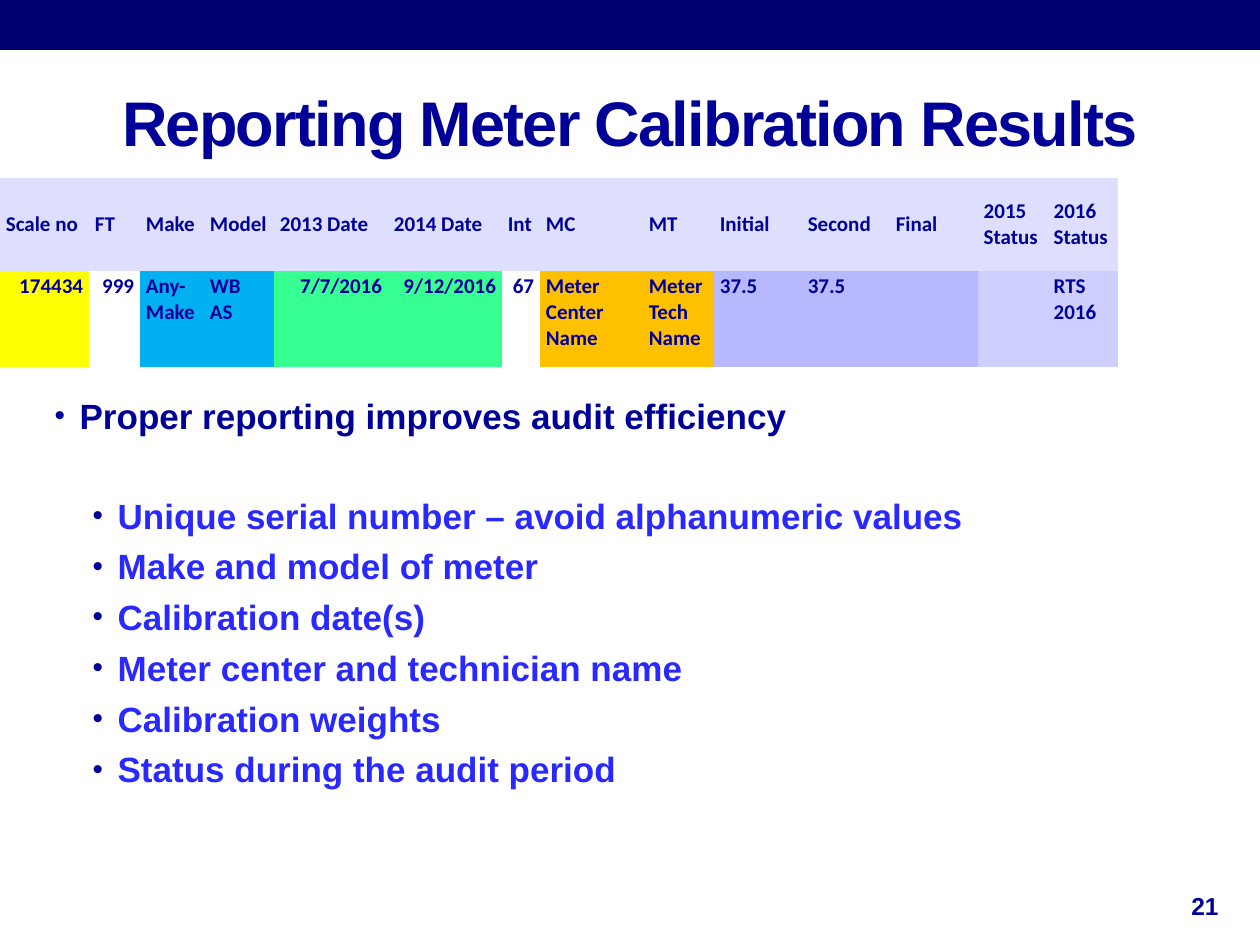
from lxml import etree
from pptx import Presentation
from pptx.dml.color import RGBColor
from pptx.enum.shapes import MSO_SHAPE
from pptx.enum.text import MSO_ANCHOR, MSO_AUTO_SIZE, PP_ALIGN
from pptx.oxml.ns import qn
from pptx.util import Emu, Pt

RECTANGLE = MSO_SHAPE.RECTANGLE
TOP, MIDDLE = MSO_ANCHOR.TOP, MSO_ANCHOR.MIDDLE
LEFT, CENTER, RIGHT = PP_ALIGN.LEFT, PP_ALIGN.CENTER, PP_ALIGN.RIGHT
NO_AUTOFIT = MSO_AUTO_SIZE.NONE

BANNER = RGBColor(0x00, 0x00, 0x73)
NAVY = RGBColor(0x00, 0x00, 0x99)
BLUE = RGBColor(0x29, 0x29, 0xFF)
HEADER = RGBColor(0xDE, 0xDE, 0xFF)
WHITE = RGBColor(0xFF, 0xFF, 0xFF)
YELLOW = RGBColor(0xFF, 0xFF, 0x00)
SKY = RGBColor(0x00, 0xB0, 0xF0)
GREEN = RGBColor(0x37, 0xFF, 0x92)
AMBER = RGBColor(0xFF, 0xC0, 0x00)
LAVENDER = RGBColor(0xB8, 0xB8, 0xFF)
PALE = RGBColor(0xCE, 0xCE, 0xFF)

NO_TABLE_STYLE = "{2D5ABB26-0587-4C30-8999-92F81FD0307C}"


def px(*lengths):
    """Turn px (126 to the inch) into EMU."""
    values = [Emu(round(length * 914400 / 126)) for length in lengths]
    return values if len(values) > 1 else values[0]


def add_run(paragraph, text, size, color=NAVY, font_name="Arial"):
    run = paragraph.add_run()
    run.text = text
    run.font.name = font_name
    run.font.size = Pt(size)
    run.font.bold = True
    run.font.color.rgb = color
    return run


presentation = Presentation()
presentation.slide_width, presentation.slide_height = px(1260, 945)
slide = presentation.slides.add_slide(presentation.slide_layouts[1])

# Top banner
banner = slide.shapes.add_shape(RECTANGLE, *px(0, 0, 1260, 50))
banner.shadow.inherit = False
banner.fill.solid()
banner.fill.fore_color.rgb = BANNER
banner.line.fill.background()

# Title
title = slide.shapes.title
title.left, title.top, title.width, title.height = px(63, 53, 1134, 136)
title.text_frame.auto_size = NO_AUTOFIT
title.text_frame.vertical_anchor = MIDDLE
paragraph = title.text_frame.paragraphs[0]
paragraph.alignment = CENTER
run = add_run(paragraph, "Reporting Meter Calibration Results", 36)
run.font._element.set("spc", "-100")

# Bulleted list: text, level, space before in points
bullets = [
    ("Proper reporting improves audit efficiency", 0, 0),
    ("Unique serial number – avoid alphanumeric values", 1, 33),
    ("Make and model of meter", 1, 5),
    ("Calibration date(s)", 1, 5),
    ("Meter center and technician name", 1, 5),
    ("Calibration weights", 1, 5),
    ("Status during the audit period", 1, 5),
]
body = slide.placeholders[1]
body.left, body.top, body.width, body.height = px(42, 388, 1166, 483)
body.text_frame.auto_size = NO_AUTOFIT
for index, (text, level, space) in enumerate(bullets):
    if index == 0:
        paragraph = body.text_frame.paragraphs[0]
    else:
        paragraph = body.text_frame.add_paragraph()
    paragraph.level = level
    properties = paragraph._p.get_or_add_pPr()
    properties.set("marL", str(px((25, 63)[level])))
    properties.set("indent", str(px(-25)))
    bullet_color = etree.SubElement(properties, qn("a:buClr"))
    etree.SubElement(bullet_color, qn("a:srgbClr"), val=str(NAVY))
    etree.SubElement(properties, qn("a:buSzPct"), val="85000")
    etree.SubElement(properties, qn("a:buFont"), typeface="Arial")
    etree.SubElement(properties, qn("a:buChar"), char="•")
    paragraph.space_before = Pt(space)
    add_run(paragraph, text, 20, (NAVY, BLUE)[level])

# Calibration record: width, heading, value, value fill, value alignment
columns = [
    (89, "Scale no", "174434", YELLOW, RIGHT),
    (51, "FT", "999", WHITE, RIGHT),
    (64, "Make", "Any-Make", SKY, LEFT),
    (70, "Model", "WB AS", SKY, LEFT),
    (114, "2013 Date", "7/7/2016", GREEN, RIGHT),
    (114, "2014 Date", "9/12/2016", GREEN, RIGHT),
    (38, "Int", "67", WHITE, RIGHT),
    (103, "MC", "Meter Center\nName", AMBER, LEFT),
    (71, "MT", "Meter Tech Name", AMBER, LEFT),
    (88, "Initial", "37.5", LAVENDER, LEFT),
    (88, "Second", "37.5", LAVENDER, LEFT),
    (88, "Final", "", LAVENDER, LEFT),
    (70, "2015 Status", "", PALE, LEFT),
    (70, "2016 Status", "RTS 2016", PALE, LEFT),
]
table_width = sum(column[0] for column in columns)
table = slide.shapes.add_table(2, len(columns), *px(0, 178, table_width, 189)).table
table.first_row = table.horz_banding = False
table._tbl.tblPr.find(qn("a:tableStyleId")).text = NO_TABLE_STYLE
table.rows[0].height, table.rows[1].height = px(93, 96)
for index, (width, heading, value, color, alignment) in enumerate(columns):
    table.columns[index].width = px(width)
    cell_rows = [(heading, HEADER, LEFT, MIDDLE), (value, color, alignment, TOP)]
    for row, (text, fill, align, anchor) in enumerate(cell_rows):
        cell = table.cell(row, index)
        cell.fill.solid()
        cell.fill.fore_color.rgb = fill
        cell.vertical_anchor = anchor
        cell.margin_left = cell.margin_right = px(6)
        cell.margin_top = cell.margin_bottom = px(3)
        for line_number, line in enumerate(text.split("\n")):
            if line_number == 0:
                paragraph = cell.text_frame.paragraphs[0]
            else:
                paragraph = cell.text_frame.add_paragraph()
            paragraph.alignment = align
            if line:
                add_run(paragraph, line, 12, font_name="Calibri")

# Slide number
number_box = slide.shapes.add_textbox(*px(1179, 883, 63, 45))
number_box.text_frame.word_wrap = True
number_box.text_frame.vertical_anchor = MIDDLE
add_run(number_box.text_frame.paragraphs[0], "21", 14)

presentation.save("out.pptx")
